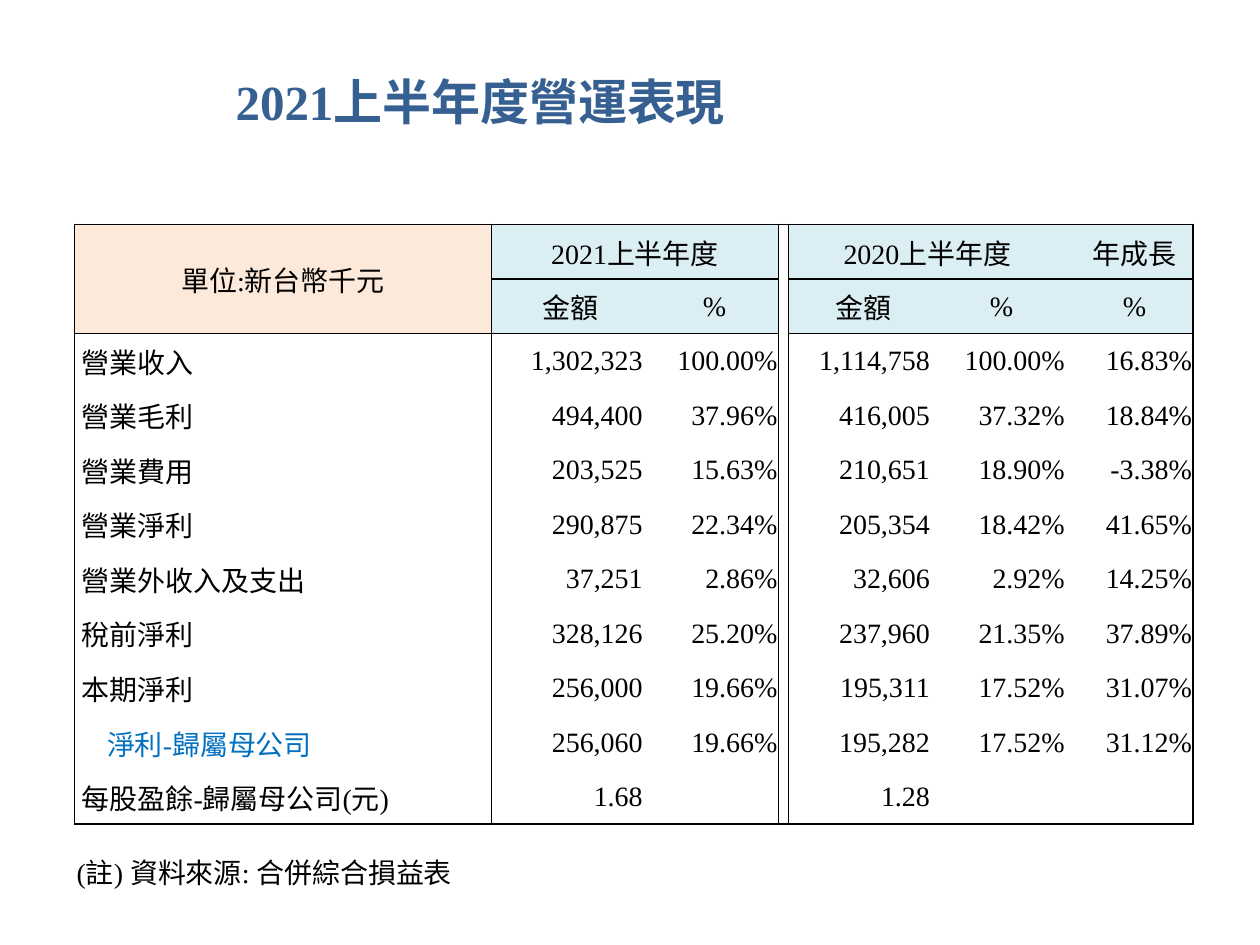
import dataclasses

import pptx
import pptx.dml.color
import pptx.enum.text
import pptx.oxml
import pptx.oxml.ns
import pptx.util

Inches = pptx.util.Inches
ALIGN = pptx.enum.text.PP_ALIGN
ANCHOR = pptx.enum.text.MSO_ANCHOR


@dataclasses.dataclass(frozen=True)
class Theme:
    font: str = "Times New Roman"
    title_size: int = 28
    body_size: int = 16
    line_width: int = 1
    title: str = "376092"
    ink: str = "000000"
    accent: str = "0070C0"
    unit_fill: str = "FDE9D9"
    head_fill: str = "DBEEF3"


THEME = Theme()
TABLE_HEIGHT = 4.76
COLUMN_WIDTHS = [3.31, 1.26, 1.02, 0.08, 1.18, 1.02, 0.08, 0.93]
AMOUNT_COLUMNS = (1, 4)
GAP_COLUMN = 3
HEADER_ROWS = 2
LINES_BEFORE_COLUMNS = (0, 1, 3, 4, 8)
MERGES = [((0, 0), (1, 0)), ((0, 1), (0, 2)), ((0, 4), (0, 5))]
SUB_ITEM = "淨利-歸屬母公司"
ROWS = [
    ["單位:新台幣千元", "2021上半年度", "", "", "2020上半年度", "", "", "年成長"],
    ["", "金額", "%", "", "金額", "%", "", "%"],
    ["營業收入", "1,302,323", "100.00%", "", "1,114,758", "100.00%", "", "16.83%"],
    ["營業毛利", "494,400", "37.96%", "", "416,005", "37.32%", "", "18.84%"],
    ["營業費用", "203,525", "15.63%", "", "210,651", "18.90%", "", "-3.38%"],
    ["營業淨利", "290,875", "22.34%", "", "205,354", "18.42%", "", "41.65%"],
    ["營業外收入及支出", "37,251", "2.86%", "", "32,606", "2.92%", "", "14.25%"],
    ["稅前淨利", "328,126", "25.20%", "", "237,960", "21.35%", "", "37.89%"],
    ["本期淨利", "256,000", "19.66%", "", "195,311", "17.52%", "", "31.07%"],
    [SUB_ITEM, "256,060", "19.66%", "", "195,282", "17.52%", "", "31.12%"],
    ["每股盈餘-歸屬母公司(元)", "1.68", "", "", "1.28", "", "", ""],
]


def rgb(color):
    return pptx.dml.color.RGBColor.from_string(color)


def write(frame, text, size=THEME.body_size, color=THEME.ink, bold=False, align=ALIGN.LEFT):
    para = frame.paragraphs[0]
    para.alignment = align
    para.font.size = pptx.util.Pt(size)
    if text:
        span = para.add_run()
        span.text = text
        span.font.name = THEME.font
        span.font.size = pptx.util.Pt(size)
        span.font.bold = bold
        span.font.color.rgb = rgb(color)


def place(shape, left, top, width, height):
    shape.left, shape.top = Inches(left), Inches(top)
    shape.width, shape.height = Inches(width), Inches(height)


def add_title(slide):
    title = slide.shapes.title
    place(title, 1.77, 0.52, 4.25, 0.57)
    title.text_frame.vertical_anchor = ANCHOR.TOP
    write(title.text_frame, "2021上半年度營運表現", size=THEME.title_size,
          color=THEME.title, bold=True)


def add_note(slide):
    box = slide.shapes.add_textbox(Inches(0.51), Inches(6.74), Inches(3.22), Inches(0.37))
    box.text_frame.word_wrap = True
    write(box.text_frame, "(註) 資料來源: 合併綜合損益表")


def line_above(row, column):
    return row in (0, len(ROWS)) or (row <= HEADER_ROWS and column != GAP_COLUMN)


def set_borders(cell, row, column):
    """Draw the cell's ruled edges and clear the others, in schema order."""
    edges = {
        "lnL": column in LINES_BEFORE_COLUMNS,
        "lnR": column + cell.span_width in LINES_BEFORE_COLUMNS,
        "lnT": line_above(row, column),
        "lnB": line_above(row + cell.span_height, column),
    }
    properties = cell._tc.get_or_add_tcPr()
    for index, (tag, ruled) in enumerate(edges.items()):
        paint = (f'<a:solidFill><a:srgbClr val="{THEME.ink}"/></a:solidFill>'
                 if ruled else "<a:noFill/>")
        width = pptx.util.Pt(THEME.line_width)
        properties.insert(index, pptx.oxml.parse_xml(
            f'<a:{tag} {pptx.oxml.ns.nsdecls("a")} w="{width}">{paint}</a:{tag}>'))


def fill_cell(cell, row, column, text):
    header = row < HEADER_ROWS
    cell.vertical_anchor = ANCHOR.MIDDLE
    cell.margin_left = cell.margin_right = cell.margin_top = Inches(0.01)
    cell.margin_bottom = 0
    if header and column != GAP_COLUMN:
        cell.fill.solid()
        cell.fill.fore_color.rgb = rgb(THEME.head_fill if column else THEME.unit_fill)
    else:
        cell.fill.background()
    if header:
        align = ALIGN.CENTER
    elif column == 0:
        align = ALIGN.LEFT
        cell.margin_left = Inches(0.26 if text == SUB_ITEM else 0.06)
    else:
        align = ALIGN.RIGHT
        if column in AMOUNT_COLUMNS:
            cell.margin_right = Inches(0.06)
    write(cell.text_frame, text, align=align,
          color=THEME.accent if text == SUB_ITEM else THEME.ink)
    set_borders(cell, row, column)


def add_results_table(slide):
    frame = slide.shapes.add_table(
        len(ROWS), len(COLUMN_WIDTHS), Inches(0.59), Inches(1.78),
        Inches(sum(COLUMN_WIDTHS)), Inches(TABLE_HEIGHT))
    table = frame.table
    table.first_row = table.horz_banding = False
    for column, width in zip(table.columns, COLUMN_WIDTHS):
        column.width = Inches(width)
    for first, last in MERGES:
        table.cell(*first).merge(table.cell(*last))
    for row, texts in enumerate(ROWS):
        for column, text in enumerate(texts):
            fill_cell(table.cell(row, column), row, column, text)


def main():
    deck = pptx.Presentation()
    deck.slide_width, deck.slide_height = Inches(10), Inches(7.5)
    slide = deck.slides.add_slide(deck.slide_layouts.get_by_name("Title Only"))
    add_title(slide)
    add_note(slide)
    add_results_table(slide)
    deck.save("out.pptx")


if __name__ == "__main__":
    main()
